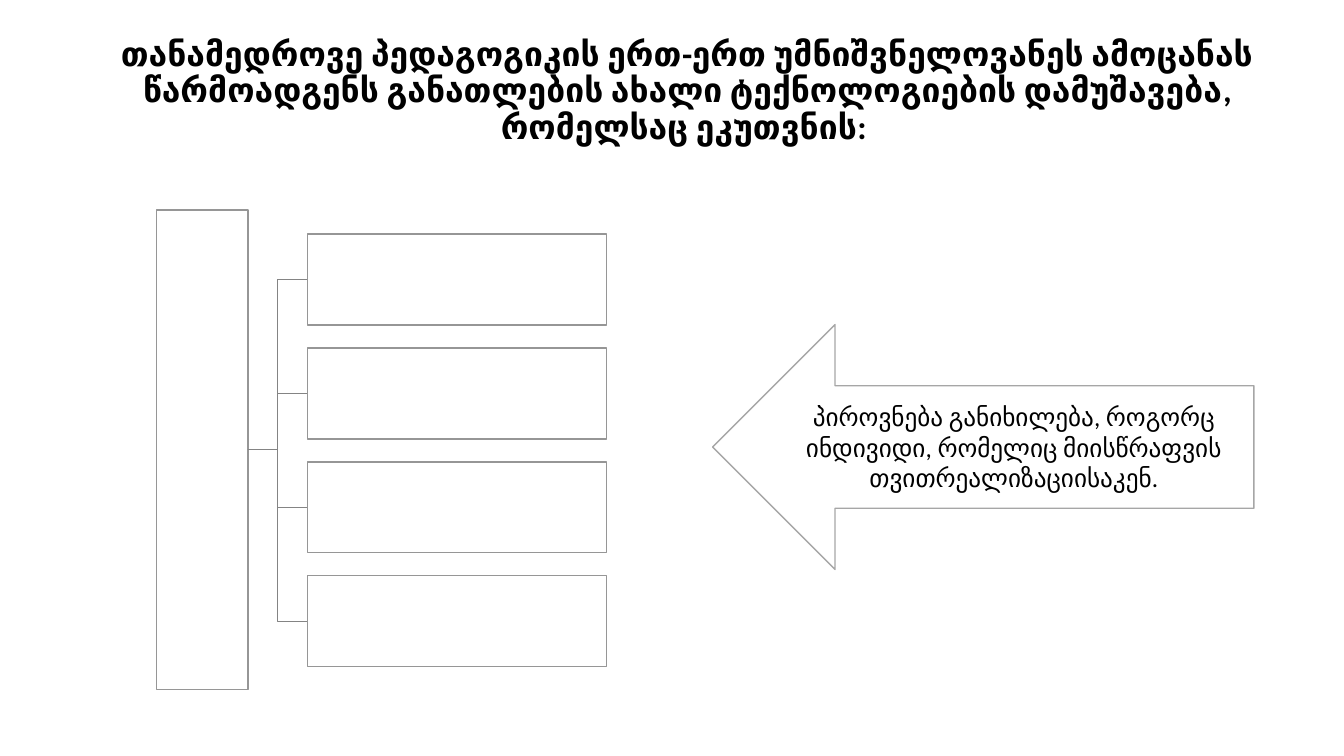
from pptx import Presentation
from pptx.dml.color import RGBColor
from pptx.enum.shapes import MSO_SHAPE
from pptx.enum.text import MSO_ANCHOR, PP_ALIGN
from pptx.util import Cm, Pt

RECT = MSO_SHAPE.RECTANGLE
ARROW = MSO_SHAPE.LEFT_ARROW
MIDDLE = MSO_ANCHOR.MIDDLE
CENTER = PP_ALIGN.CENTER

TITLE = ("თანამედროვე პედაგოგიკის ერთ-ერთ უმნიშვნელოვანეს ამოცანას "
         "წარმოადგენს განათლების ახალი ტექნოლოგიების დამუშავება, "
         "რომელსაც ეკუთვნის: ")
NOTE = ("პიროვნება განიხილება, როგორც ინდივიდი, რომელიც მიისწრაფვის "
        "თვითრეალიზაციისაკენ.")

# Tree layout in cm
BAR_LEFT, BAR_TOP, BAR_WIDTH, BAR_HEIGHT = 3.95, 5.29, 2.3, 12.09
BOX_LEFT, BOX_TOP, BOX_WIDTH, BOX_HEIGHT = 7.75, 5.9, 7.54, 2.29
BOX_STEP = 2.87
BOX_COUNT = 4


def color(text):
    return RGBColor.from_string(text)


def add_text(shape, text, size, bold=False, spacing=1.0):
    frame = shape.text_frame
    frame.word_wrap = True
    frame.vertical_anchor = MIDDLE
    para = frame.paragraphs[0]
    para.alignment = CENTER
    para.line_spacing = spacing
    run = para.add_run()
    run.text = text
    run.font.name = "Calibri"
    run.font.size = Pt(size)
    run.font.bold = bold
    run.font.color.rgb = color("000000")


def add_block(slide, kind, left, top, width, height, line):
    block = slide.shapes.add_shape(kind, Cm(left), Cm(top), Cm(width), Cm(height))
    block.shadow.inherit = False
    block.fill.solid()
    block.fill.fore_color.rgb = color("FFFFFF")
    block.line.color.rgb = color(line)
    block.line.width = Pt(1)
    return block


def add_branch(slide, start, end):
    """Draw a line that bends halfway between two (x, y) points."""
    bend = (start[0] + end[0]) / 2
    points = [(bend, start[1]), (bend, end[1]), end]
    builder = slide.shapes.build_freeform(Cm(start[0]), Cm(start[1]))
    builder.add_line_segments([(Cm(x), Cm(y)) for x, y in points], close=False)
    branch = builder.convert_to_shape()
    branch.shadow.inherit = False
    branch.fill.background()
    branch.line.color.rgb = color("848484")
    branch.line.width = Pt(1)


def main():
    deck = Presentation()
    deck.slide_width, deck.slide_height = Cm(33.87), Cm(19.05)
    slide = deck.slides.add_slide(deck.slide_layouts[6])

    # Title
    title = slide.shapes.add_textbox(Cm(2.72), Cm(0.48), Cm(29.21), Cm(3.68))
    add_text(title, TITLE, 24, bold=True, spacing=0.9)

    # Tree: bar, branches and boxes
    add_block(slide, RECT, BAR_LEFT, BAR_TOP, BAR_WIDTH, BAR_HEIGHT, "969696")
    root = (BAR_LEFT + BAR_WIDTH, BAR_TOP + BAR_HEIGHT / 2)
    for index in range(BOX_COUNT):
        top = BOX_TOP + index * BOX_STEP
        add_branch(slide, root, (BOX_LEFT, top + BOX_HEIGHT / 2))
        add_block(slide, RECT, BOX_LEFT, top, BOX_WIDTH, BOX_HEIGHT, "969696")

    # Arrow with the note
    arrow = add_block(slide, ARROW, 17.96, 8.18, 13.64, 6.17, "A6A6A6")
    add_text(arrow, NOTE, 18)

    deck.save("out.pptx")


if __name__ == "__main__":
    main()
